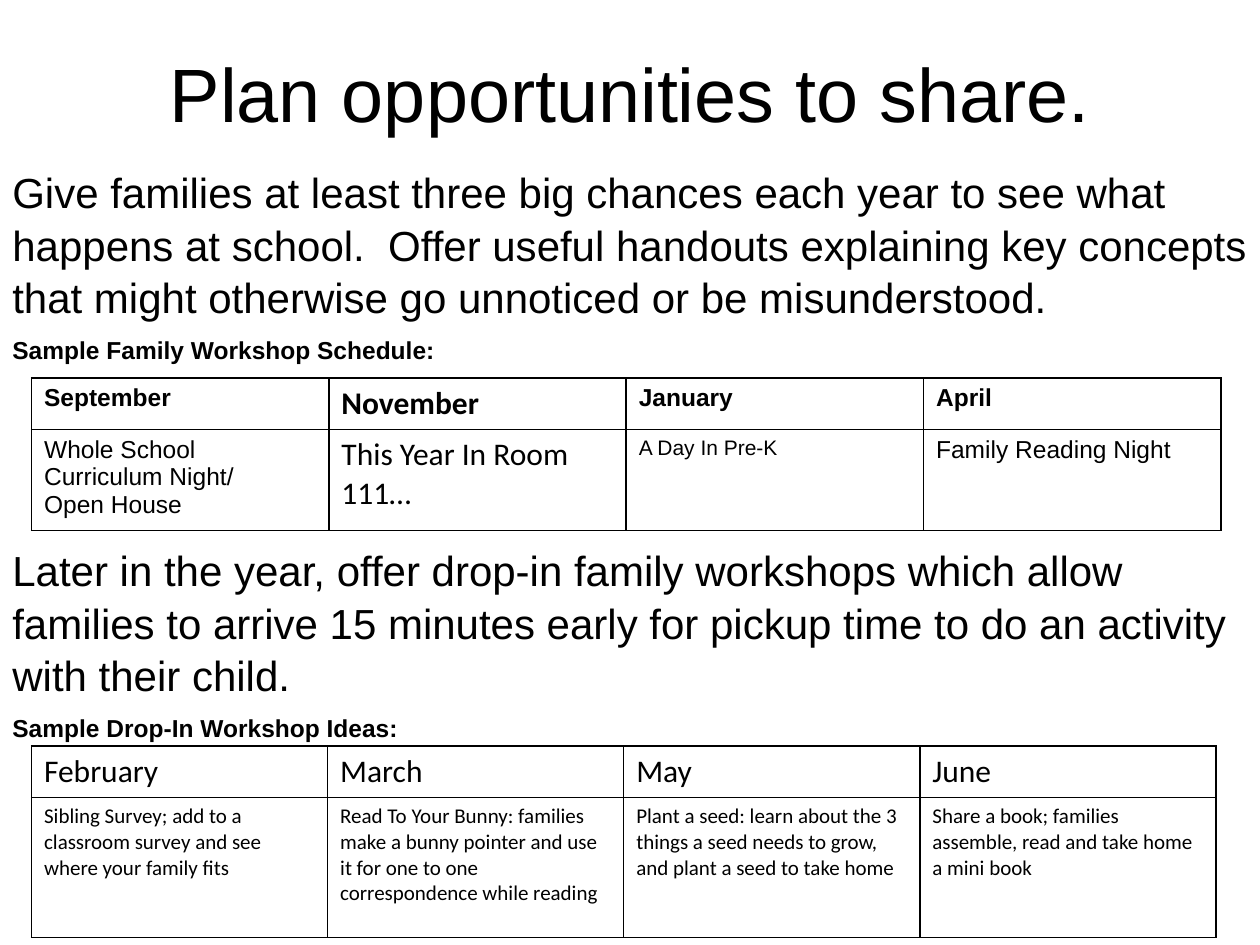
from dataclasses import dataclass

from lxml.etree import SubElement
from pptx import Presentation
from pptx.dml.color import RGBColor
from pptx.enum.text import MSO_ANCHOR, PP_ALIGN
from pptx.oxml.ns import qn
from pptx.util import Inches, Pt


@dataclass(frozen=True)
class Theme:
    """Colours, fonts and type sizes of the slide."""
    ink: str = "000000"
    sans: str = "Arial"
    humanist: str = "Calibri"
    title: float = 43.2
    body: int = 24
    large: int = 18
    label: int = 14
    small: int = 12


THEME = Theme()
LABEL = (THEME.sans, THEME.label, False)
LABEL_BOLD = (THEME.sans, THEME.label, True)
LARGE = (THEME.humanist, THEME.large, False)
LARGE_BOLD = (THEME.humanist, THEME.large, True)
SMALL = (THEME.humanist, THEME.small, False)
SMALL_SANS = (THEME.sans, THEME.small, False)
BODY = (THEME.sans, THEME.body, False)

TITLE = "Plan opportunities to share."
BODY_PARAGRAPHS = [
    ("Give families at least three big chances each year to see what happens at school.  "
     "Offer useful handouts explaining key concepts that might otherwise go unnoticed or "
     "be misunderstood.", BODY, 0),
    ("Sample Family Workshop Schedule:", LABEL_BOLD, 7.5),
    ("Later in the year, offer drop-in family workshops which allow families to arrive "
     "15 minutes early for pickup time to do an activity with their child.", BODY, 101),
    ("Sample Drop-In Workshop Ideas:", LABEL_BOLD, 7.5),
]
SCHEDULE = [
    [("September", LABEL_BOLD), ("November", LARGE_BOLD),
     ("January", LABEL_BOLD), ("April", LABEL_BOLD)],
    [("Whole School Curriculum Night/\nOpen House", LABEL), ("This Year In Room 111…", LARGE),
     ("A Day In Pre-K", SMALL_SANS), ("Family Reading Night", LABEL)],
]
DROP_IN_IDEAS = [
    [(month, LARGE) for month in ("February", "March", "May", "June")],
    [(idea, SMALL) for idea in (
        "Sibling Survey; add to a classroom survey and see where your family fits",
        "Read To Your Bunny: families make a bunny pointer and use it for one to one "
        "correspondence while reading",
        "Plant a seed: learn about the 3 things a seed needs to grow, and plant a seed "
        "to take home",
        "Share a book; families assemble, read and take home a mini book",
    )],
]


def style_paragraph(paragraph, style):
    """Apply a font, size and weight to every run of a paragraph."""
    name, size, bold = style
    for run in paragraph.runs:
        run.font.name = name
        run.font.size = Pt(size)
        run.font.bold = bold
        run.font.color.rgb = RGBColor.from_string(THEME.ink)


def add_title(slide):
    """Fill and place the title placeholder."""
    title = slide.shapes.title
    title.left, title.top = Inches(0.69), Inches(0.4)
    title.width, title.height = Inches(8.62), Inches(1.45)
    title.text_frame.text = TITLE
    title.text_frame.vertical_anchor = MSO_ANCHOR.TOP
    paragraph = title.text_frame.paragraphs[0]
    paragraph.alignment = PP_ALIGN.CENTER
    paragraph.line_spacing = 0.9
    style_paragraph(paragraph, (THEME.sans, THEME.title, False))


def add_body(slide):
    """Add the running text, with room left for the first table."""
    text_frame = slide.shapes.add_textbox(
        Inches(0), Inches(1.25), Inches(10), Inches(6.08)).text_frame
    text_frame.word_wrap = True
    text_frame.text = "\n".join(text for text, _, _ in BODY_PARAGRAPHS)
    for paragraph, (_, style, space) in zip(text_frame.paragraphs, BODY_PARAGRAPHS):
        paragraph.space_before = Pt(space)
        if style == BODY:
            paragraph.line_spacing = 1.05
        style_paragraph(paragraph, style)


def outline_cell(cell):
    """Draw a thin line on all four sides of a cell and clear its fill."""
    properties = cell._tc.get_or_add_tcPr()
    for side in ("a:lnL", "a:lnR", "a:lnT", "a:lnB"):
        line = SubElement(properties, qn(side), w=str(Pt(1)))
        fill = SubElement(line, qn("a:solidFill"))
        SubElement(fill, qn("a:srgbClr"), val=THEME.ink)
    cell.fill.background()


def add_grid(slide, rows, top, column_width, row_heights):
    """Add an outlined table of styled cell texts."""
    columns = len(rows[0])
    table = slide.shapes.add_table(
        len(rows), columns, Inches(0.25), Inches(top),
        Inches(column_width * columns), Inches(sum(row_heights))).table
    table.first_row = table.horz_banding = False
    for column in table.columns:
        column.width = Inches(column_width)
    for row_index, (row, height) in enumerate(zip(rows, row_heights)):
        table.rows[row_index].height = Inches(height)
        for column_index, (text, style) in enumerate(row):
            cell = table.cell(row_index, column_index)
            cell.text_frame.text = text
            for paragraph in cell.text_frame.paragraphs:
                style_paragraph(paragraph, style)
            outline_cell(cell)


def main():
    """Build and save the slide."""
    presentation = Presentation()
    presentation.slide_width, presentation.slide_height = Inches(10), Inches(7.5)
    slide = presentation.slides.add_slide(presentation.slide_layouts[5])
    add_title(slide)
    add_body(slide)
    add_grid(slide, SCHEDULE, 3, 2.36, (0.41, 0.76))
    add_grid(slide, DROP_IN_IDEAS, 5.92, 2.35, (0.41, 1.11))
    presentation.save("out.pptx")


if __name__ == "__main__":
    main()
